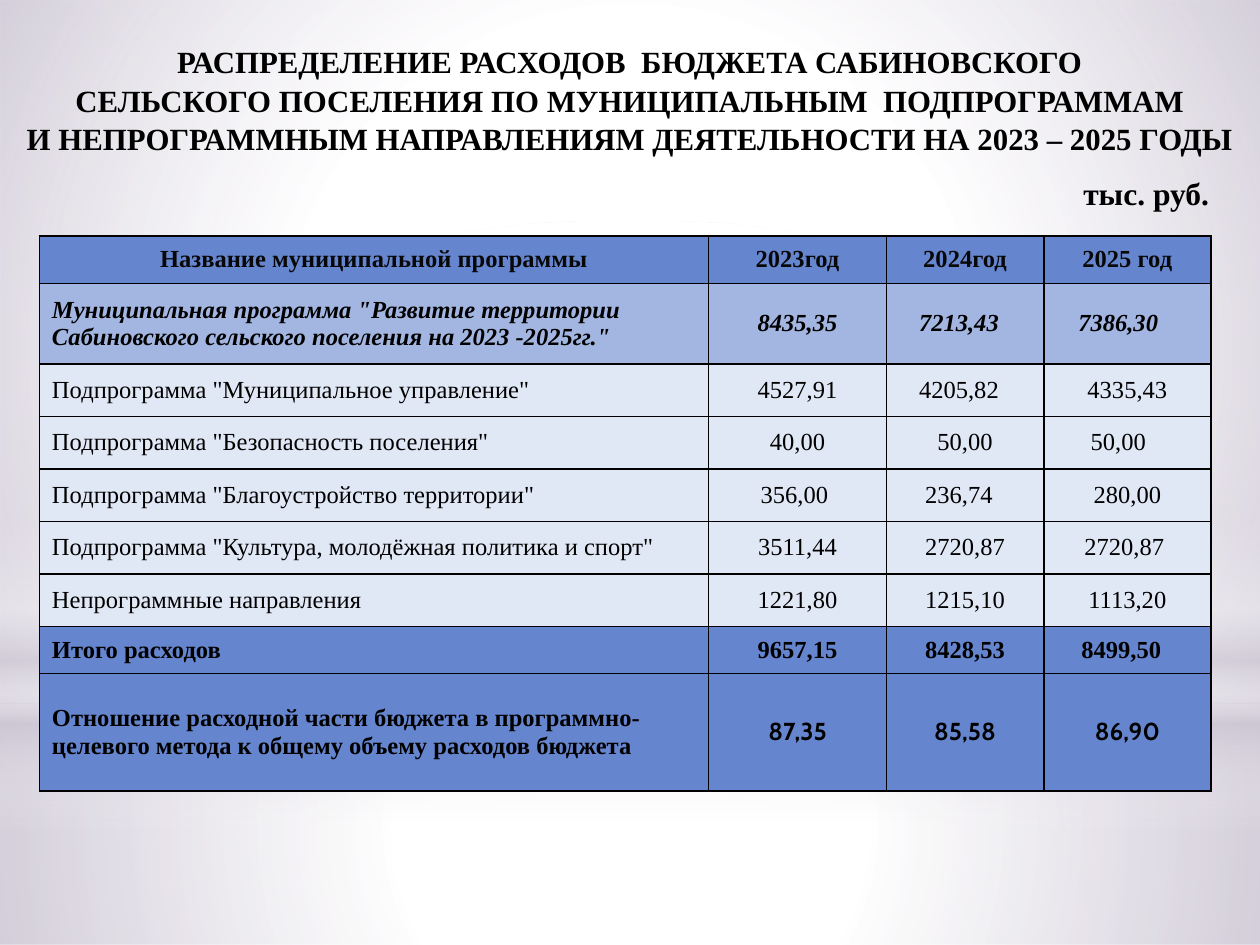
from lxml import etree
from pptx import Presentation
from pptx.dml.color import RGBColor
from pptx.enum.shapes import MSO_SHAPE
from pptx.enum.text import MSO_ANCHOR, MSO_AUTO_SIZE, PP_ALIGN
from pptx.oxml.ns import qn
from pptx.util import Pt

RECTANGLE, ELLIPSE = MSO_SHAPE.RECTANGLE, MSO_SHAPE.OVAL
LEFT, CENTER, RIGHT = PP_ALIGN.LEFT, PP_ALIGN.CENTER, PP_ALIGN.RIGHT
MIDDLE = MSO_ANCHOR.MIDDLE
NO_FIT, GROW = MSO_AUTO_SIZE.NONE, MSO_AUTO_SIZE.SHAPE_TO_FIT_TEXT
TITLE_ONLY = 5

BLACK, HEADER_INK = "000000", "080808"
WHITE, LILAC = "FFFFFF", "C9C2D1"
STRONG, MEDIUM, PALE = "6585CF", "A3B6E2", "E0E7F5"
SERIF, SANS = "Times New Roman", "Cabin"

TITLE = [
    "РАСПРЕДЕЛЕНИЕ РАСХОДОВ  БЮДЖЕТА САБИНОВСКОГО",
    "СЕЛЬСКОГО ПОСЕЛЕНИЯ ПО МУНИЦИПАЛЬНЫМ  ПОДПРОГРАММАМ",
    "И НЕПРОГРАММНЫМ НАПРАВЛЕНИЯМ ДЕЯТЕЛЬНОСТИ НА 2023 – 2025 ГОДЫ",
]

# Backdrop: shape, box, (position %, colour, opacity %) stops, radial or linear
BACKDROP = [
    (RECTANGLE, (0, 402, 720, 138),
     [(0, WHITE, 91), (37, WHITE, 76), (100, LILAC, 79)], True),
    (RECTANGLE, (0, 0, 720, 402),
     [(0, WHITE, 89), (48, WHITE, 62), (100, LILAC, 79)], True),
    (RECTANGLE, (0, 296.5, 720, 180),
     [(0, WHITE, 0), (29, WHITE, 30), (45, LILAC, 40),
      (55, WHITE, 26), (65, LILAC, 60), (100, WHITE, 0)], False),
    (ELLIPSE, (0, 126, 720, 402), [(0, WHITE, 100), (56, WHITE, 0)], True),
]

COLUMN_WIDTHS = [382.5, 101.5, 90, 95.5]
NO_SHIFT = (0, 0, 0)
HEADER = {"color": HEADER_INK, "bold": True}
PROGRAMME = {"bold": True, "italic": True}
PLAIN = {}
TOTAL = {"bold": True}
RATIO = {"bold": True, "value_font": SANS}

# Row: height, fill, style, label, values, extra right inset of each value
ROWS = [
    (27.2, STRONG, HEADER, "Название муниципальной программы",
     ("2023год", "2024год", "2025 год"), NO_SHIFT),
    (46, MEDIUM, PROGRAMME,
     'Муниципальная программа "Развитие территории Сабиновского '
     'сельского поселения на 2023 -2025гг."',
     ("8435,35", "7213,43", "7386,30"), (0, 7, 10.5)),
    (30, PALE, PLAIN, 'Подпрограмма "Муниципальное управление"',
     ("4527,91", "4205,82", "4335,43"), (0, 7, 0)),
    (30, PALE, PLAIN, 'Подпрограмма "Безопасность поселения"',
     ("40,00", "50,00", "50,00"), (0, 0, 10.5)),
    (30, PALE, PLAIN, 'Подпрограмма "Благоустройство территории"',
     ("356,00", "236,74", "280,00"), (3.5, 7, 0)),
    (30, PALE, PLAIN, 'Подпрограмма "Культура, молодёжная политика и спорт"',
     ("3511,44", "2720,87", "2720,87"), (0, 0, 3.5)),
    (30, PALE, PLAIN, "Непрограммные направления",
     ("1221,80", "1215,10", "1113,20"), NO_SHIFT),
    (27, STRONG, TOTAL, "Итого расходов",
     ("9657,15", "8428,53", "8499,50"), (0, 0, 7)),
    (67, STRONG, RATIO,
     "Отношение расходной части бюджета в программно-целевого метода "
     "к общему объему расходов бюджета",
     ("87,35", "85,58", "86,90"), NO_SHIFT),
]


def rgb(value):
    return RGBColor.from_string(value)


def add_color(parent, color, opacity=100):
    element = etree.SubElement(parent, qn("a:srgbClr"), val=color)
    if opacity < 100:
        etree.SubElement(element, qn("a:alpha"), val=str(opacity * 1000))


class BudgetSlide:
    """Holds the text and border style and the slide being built."""

    font, table_size, border = SERIF, 14, 1

    def __init__(self, slide):
        self.slide = slide

    def add_text(self, paragraph, text, size, align, color=BLACK,
                 bold=False, italic=False, font=None):
        paragraph.alignment = align
        run = paragraph.add_run()
        run.text = text
        run.font.name = font or self.font
        run.font.size = Pt(size)
        run.font.bold, run.font.italic = bold, italic
        run.font.color.rgb = rgb(color)

    def glow(self, kind, box, stops, radial):
        """Add an unlined shape with a translucent gradient."""
        shape = self.slide.shapes.add_shape(kind, *map(Pt, box))
        shape.shadow.inherit = False
        shape.line.fill.background()
        gradient = etree.Element(qn("a:gradFill"), rotWithShape="1")
        stop_list = etree.SubElement(gradient, qn("a:gsLst"))
        for position, color, opacity in stops:
            stop = etree.SubElement(stop_list, qn("a:gs"), pos=str(position * 1000))
            add_color(stop, color, opacity)
        if radial:
            circle = etree.SubElement(gradient, qn("a:path"), {"path": "circle"})
            etree.SubElement(circle, qn("a:fillToRect"),
                             {side: "50000" for side in "ltrb"})
        else:
            etree.SubElement(gradient, qn("a:lin"), ang="5400000", scaled="0")
        shape.element.spPr.find(qn("a:prstGeom")).addnext(gradient)

    def title(self, lines, box):
        shape = self.slide.shapes.title
        shape.left, shape.top, shape.width, shape.height = map(Pt, box)
        self.slide.shapes.element.append(shape.element)  # in front of the backdrop
        frame = shape.text_frame
        frame.word_wrap, frame.auto_size = True, NO_FIT
        frame.vertical_anchor = MIDDLE
        for index, line in enumerate(lines):
            paragraph = frame.add_paragraph() if index else frame.paragraphs[0]
            paragraph.line_spacing = 1.05
            self.add_text(paragraph, line, 17.6, CENTER, bold=True)

    def label(self, text, box):
        frame = self.slide.shapes.add_textbox(*map(Pt, box)).text_frame
        frame.word_wrap, frame.auto_size = True, GROW
        self.add_text(frame.paragraphs[0], text, 18, RIGHT, bold=True)

    def cell(self, cell, text, fill, align, inset, shift=0, **style):
        properties = cell._tc.get_or_add_tcPr()
        for side in ("lnL", "lnR", "lnT", "lnB"):
            line = etree.SubElement(properties, qn(f"a:{side}"),
                                    w=str(Pt(self.border)))
            add_color(etree.SubElement(line, qn("a:solidFill")), BLACK)
        cell.fill.solid()
        cell.fill.fore_color.rgb = rgb(fill)
        cell.vertical_anchor = MIDDLE
        cell.margin_left, cell.margin_right = Pt(inset), Pt(inset + shift)
        cell.margin_top = cell.margin_bottom = Pt(3.6)
        self.add_text(cell.text_frame.paragraphs[0], text, self.table_size,
                      align, **style)

    def table(self, rows, widths, left, top):
        total_height = sum(row[0] for row in rows)
        table = self.slide.shapes.add_table(
            len(rows), len(widths), Pt(left), Pt(top),
            Pt(sum(widths)), Pt(total_height)).table
        table.first_row = table.horz_banding = False
        for column, width in zip(table.columns, widths):
            column.width = Pt(width)
        for index, (height, fill, style, name, values, shifts) in enumerate(rows):
            table.rows[index].height = Pt(height)
            is_header = style is HEADER
            style = dict(style)
            value_font = style.pop("value_font", None)
            inset = 3.6 if is_header else 7.2
            self.cell(table.cell(index, 0), name, fill,
                      CENTER if is_header else LEFT, inset, **style)
            for column, (value, shift) in enumerate(zip(values, shifts), 1):
                self.cell(table.cell(index, column), value, fill, CENTER,
                          inset, shift, font=value_font, **style)


def main():
    presentation = Presentation()
    presentation.slide_width, presentation.slide_height = Pt(720), Pt(540)
    layout = presentation.slide_layouts[TITLE_ONLY]
    budget = BudgetSlide(presentation.slides.add_slide(layout))
    for backdrop in BACKDROP:
        budget.glow(*backdrop)
    budget.table(ROWS, COLUMN_WIDTHS, 22.5, 134.8)
    budget.label("тыс. руб.", (602, 96, 96, 29))
    budget.title(TITLE, (0, 11.5, 720, 90))
    presentation.save("out.pptx")


if __name__ == "__main__":
    main()
